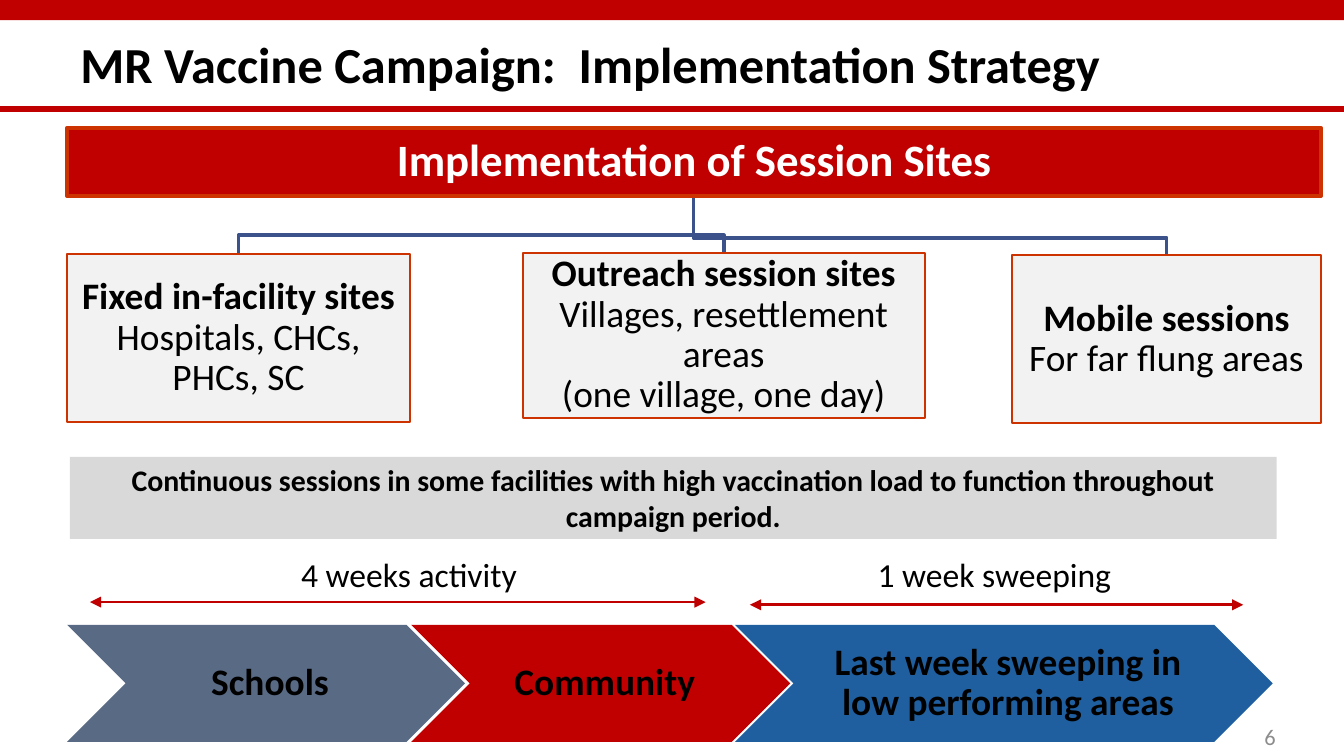
from dataclasses import dataclass

from lxml.etree import SubElement
from pptx import Presentation
from pptx.dml.color import RGBColor
from pptx.enum.shapes import MSO_CONNECTOR, MSO_SHAPE
from pptx.enum.text import MSO_ANCHOR, PP_ALIGN
from pptx.oxml.ns import qn
from pptx.util import Inches, Pt

RED = "C00000"
BORDER = "CC3300"
BLACK = "000000"
WHITE = "FFFFFF"


@dataclass
class Line:
    text: str
    bold: bool = False


@dataclass
class Style:
    size: float
    color: str = BLACK
    align: PP_ALIGN = PP_ALIGN.CENTER
    spacing: float = 1.0
    insets: tuple[float, float, float] = (0.07, 0.04, 0.07)  # left, top and bottom, right
    wrap: bool = True


@dataclass
class Site:
    left: float
    top: float
    width: float
    height: float
    lines: list[Line]
    elbow: float


@dataclass
class Phase:
    left: float
    width: float
    label: str
    fill: str


@dataclass
class Span:
    start: float
    end: float
    top: float
    label: str
    label_left: float
    label_width: float


def rgb(value: str) -> RGBColor:
    return RGBColor.from_string(value)


def write(shape, lines: list[Line], style: Style) -> None:
    frame = shape.text_frame
    frame.word_wrap = style.wrap
    frame.vertical_anchor = MSO_ANCHOR.MIDDLE
    left, vertical, right = map(Inches, style.insets)
    frame.margin_left, frame.margin_right = left, right
    frame.margin_top = frame.margin_bottom = vertical
    para = frame.paragraphs[0]
    para.alignment = style.align
    para.line_spacing = style.spacing
    for index, line in enumerate(lines):
        if index:
            para.add_line_break()
        run = para.add_run()
        run.text = line.text
        run.font.name = "Calibri"
        run.font.size = Pt(style.size)
        run.font.bold = line.bold
        run.font.color.rgb = rgb(style.color)


def add_box(page, kind: MSO_SHAPE, place: tuple, fill: str,
            border: str = "", weight: float = 1):
    box = page.shapes.add_shape(kind, *map(Inches, place))
    box.shadow.inherit = False
    box.fill.solid()
    box.fill.fore_color.rgb = rgb(fill)
    if border:
        box.line.color.rgb = rgb(border)
        box.line.width = Pt(weight)
    else:
        box.line.fill.background()
    return box


def add_text(page, place: tuple, line: Line, style: Style) -> None:
    write(page.shapes.add_textbox(*map(Inches, place)), [line], style)


def add_line(page, start: tuple, end: tuple, weight: float, arrows: bool = False) -> None:
    line = page.shapes.add_connector(MSO_CONNECTOR.STRAIGHT, *map(Inches, start + end))
    line.line.color.rgb = rgb(RED)
    line.line.width = Pt(weight)
    if arrows:
        outline = line.line._get_or_add_ln()
        for tag in ("a:headEnd", "a:tailEnd"):
            SubElement(outline, qn(tag), type="triangle")
    SubElement(line._element.spPr, qn("a:effectLst"))


def add_branch(page, root: tuple, site: Site) -> None:
    center = site.left + site.width / 2
    points = [root, (root[0], site.elbow), (center, site.elbow), (center, site.top)]
    start, *rest = [(Inches(x), Inches(y)) for x, y in points]
    builder = page.shapes.build_freeform(*start, scale=1.0)
    builder.add_line_segments(rest, close=False)
    branch = builder.convert_to_shape()
    branch.shadow.inherit = False
    branch.fill.background()
    branch.line.color.rgb = rgb("3B528A")
    branch.line.width = Pt(2)


# Widescreen page, 16 to 9
deck = Presentation()
deck.slide_width = Inches(10)
deck.slide_height = Inches(10 * 9 / 16)
page = deck.slides.add_slide(deck.slide_layouts[6])

# Title band and page number
add_box(page, MSO_SHAPE.RECTANGLE, (0, 0, 10, 0.15), RED)
add_text(page, (0.5, 0.15, 9.5, 0.64),
         Line("MR Vaccine Campaign:  Implementation Strategy", True),
         Style(27, align=PP_ALIGN.LEFT, insets=(0.1, 0.05, 0.1)))
add_line(page, (0, 0.81), (10, 0.81), 3)
add_text(page, (7.26, 5.33, 2.33, 0.3), Line("6"),
         Style(12, "8C8C8C", PP_ALIGN.RIGHT, insets=(0.1, 0.05, 0.1)))

# Session site tree
sites = [
    Site(7.53, 1.9, 2.3, 1.25,
         [Line("Mobile sessions", True), Line("For far flung areas")], 1.77),
    Site(3.89, 1.88, 2.99, 1.23,
         [Line("Outreach session sites", True), Line("Villages, resettlement areas"),
          Line("(one village, one day)")], 1.75),
    Site(0.5, 1.89, 2.55, 1.25,
         [Line("Fixed in-facility sites", True), Line("Hospitals, CHCs, PHCs, SC")], 1.75),
]
for site in sites:
    add_branch(page, (5.16, 1.46), site)
root_box = add_box(page, MSO_SHAPE.RECTANGLE, (0.5, 0.95, 9.33, 0.51), RED, BORDER, 2)
write(root_box, [Line("Implementation of Session Sites", True)],
      Style(24, WHITE, spacing=0.9, insets=(0.02, 0.02, 0.02)))
for site in reversed(sites):
    place = (site.left, site.top, site.width, site.height)
    box = add_box(page, MSO_SHAPE.RECTANGLE, place, "F2F2F2", BORDER)
    write(box, site.lines, Style(20, spacing=0.9, insets=(0.03, 0.01, 0.03)))

# Note on continuous sessions
note = add_box(page, MSO_SHAPE.RECTANGLE, (0.52, 3.4, 8.98, 0.61), "D9D9D9")
write(note, [Line("Continuous sessions in some facilities with high vaccination load "
                  "to function throughout campaign period.", True)], Style(16))

# Campaign phases
phases = [
    Phase(0.5, 2.96, "Schools", "596A85"),
    Phase(3.06, 2.82, "Community", RED),
    Phase(5.47, 4, "Last week sweeping in low performing areas", "1F5FA0"),
]
for phase in phases:
    chevron = add_box(page, MSO_SHAPE.CHEVRON, (phase.left, 4.65, phase.width, 0.87),
                      phase.fill)
    write(chevron, [Line(phase.label, True)],
          Style(20, spacing=0.9, insets=(0.09, 0.03, 0.03)))

# Durations above the phases
spans = [
    Span(0.67, 5.25, 4.48, "4 weeks activity", 2.17, 1.78),
    Span(5.58, 9.25, 4.5, "1 week sweeping", 6.46, 1.91),
]
for span in spans:
    add_line(page, (span.start, span.top), (span.end, span.top), 1.5, arrows=True)
    label = add_box(page, MSO_SHAPE.RECTANGLE,
                    (span.label_left, 4.08, span.label_width, 0.38), WHITE)
    write(label, [Line(span.label)], Style(18, align=PP_ALIGN.LEFT, wrap=False))

deck.save("out.pptx")
